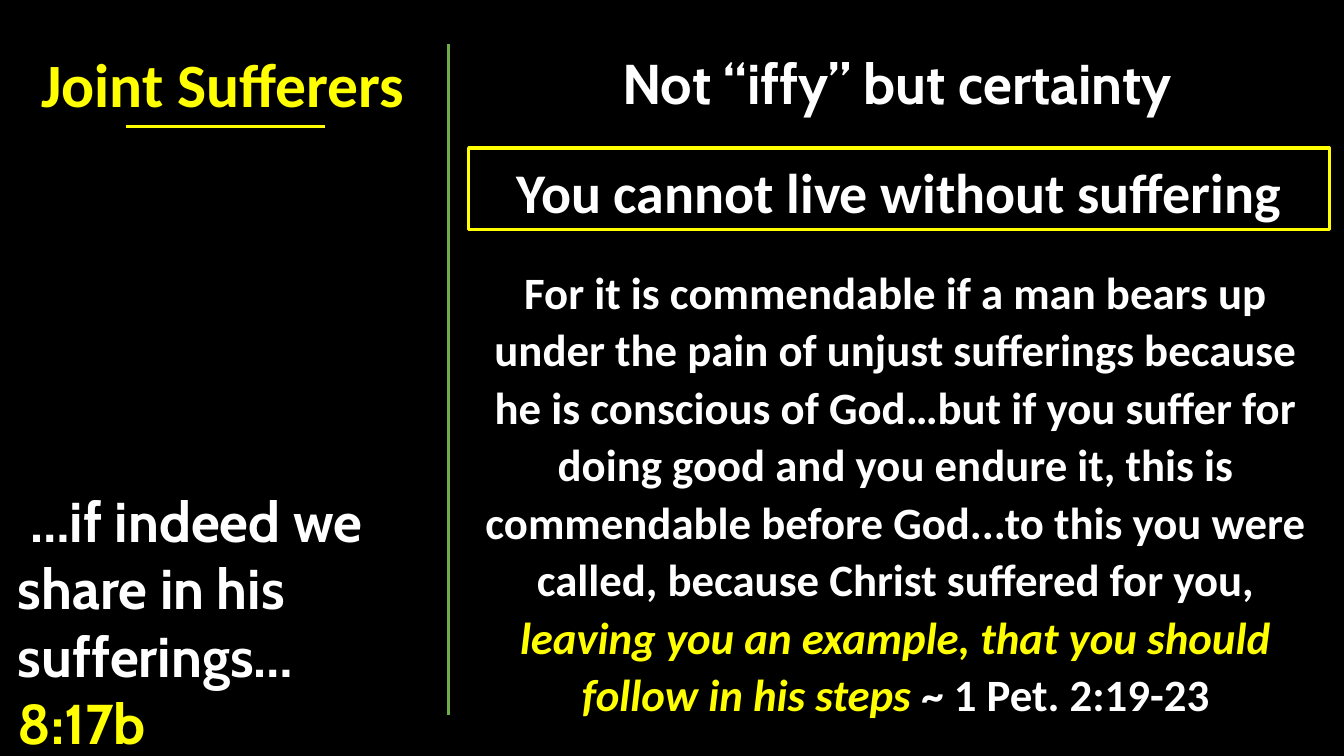
import pptx
import pptx.util
import pptx.dml.color
import pptx.enum.shapes
import pptx.enum.text
import lxml.etree
from pptx.oxml.ns import qn

Cm, Pt = pptx.util.Cm, pptx.util.Pt
ALIGN = pptx.enum.text.PP_ALIGN
BLACK, WHITE, YELLOW, GREEN = "000000", "FFFFFF", "FFFF00", "70AD47"
LINE_WIDTH = 2.25

# Content: position in cm (left, top, width, height), paragraph format, runs
TEXTS = [
    dict(at=(0.2, 1.04, 10.85, 2.13), font="Calibri", size=44,
         para=dict(alignment=ALIGN.CENTER),
         runs=[("Joint Sufferers", YELLOW, False)]),
    dict(at=(0.2, 12.14, 10.41, 7.09), font="Cabin", size=40,
         para=dict(alignment=ALIGN.LEFT),
         runs=[(" …if indeed we share in his sufferings… ", WHITE, False),
               ("8:17b", YELLOW, False)]),
    dict(at=(11.81, 1.09, 21.59, 1.96), font="Cabin", size=40,
         para=dict(alignment=ALIGN.CENTER),
         runs=[("Not “iffy” but certainty", WHITE, False)]),
    dict(at=(11.81, 3.73, 21.69, 2.06), font="Calibri", size=40, border=YELLOW,
         para=dict(alignment=ALIGN.CENTER, line_spacing=1.07),
         runs=[("You cannot live without suffering", WHITE, False)]),
    dict(at=(11.73, 6.45, 21.69, 11.94), font="Calibri", size=32,
         para=dict(alignment=ALIGN.CENTER, line_spacing=1.07),
         runs=[("For it is commendable if a man bears up under the pain of unjust "
                "sufferings because he is conscious of God…but if you suffer for "
                "doing good and you endure it, this is commendable before God...to "
                "this you were called, because Christ suffered for you, ", WHITE, False),
               ("leaving you an example, that you should follow in his steps ",
                YELLOW, True),
               ("~ 1 Pet. 2:19-23", WHITE, False)]),
]

# Lines: x1, y1, x2, y2 in cm, colour
LINES = [
    (11.3, 1.12, 11.3, 18.01, GREEN),
    (3.18, 3.18, 8.18, 3.18, YELLOW),
]


def rgb(code):
    return pptx.dml.color.RGBColor.from_string(code)


def set_attrs(obj, values):
    for name, value in values.items():
        setattr(obj, name, value)


def style_line(line, color):
    line.color.rgb = rgb(color)
    line.width = Pt(LINE_WIDTH)


def add_text(s, at, font, size, para, runs, border=None):
    box = [Cm(v) for v in at]
    if border:
        sp = s.shapes.add_shape(pptx.enum.shapes.MSO_SHAPE.RECTANGLE, *box)
        sp.shadow.inherit = False
        sp.fill.background()
        style_line(sp.line, border)
    else:
        sp = s.shapes.add_textbox(*box)
    tf = sp.text_frame
    set_attrs(tf, dict(word_wrap=True,
                       vertical_anchor=pptx.enum.text.MSO_ANCHOR.TOP,
                       auto_size=pptx.enum.text.MSO_AUTO_SIZE.SHAPE_TO_FIT_TEXT))
    p = tf.paragraphs[0]
    set_attrs(p, para)
    for text, color, italic in runs:
        r = p.add_run()
        r.text = text
        set_attrs(r.font, dict(name=font, size=Pt(size), bold=True, italic=italic))
        r.font.color.rgb = rgb(color)


def add_line(s, x1, y1, x2, y2, color):
    c = s.shapes.add_connector(pptx.enum.shapes.MSO_CONNECTOR.STRAIGHT,
                               Cm(x1), Cm(y1), Cm(x2), Cm(y2))
    style_line(c.line, color)
    lxml.etree.SubElement(c._element.spPr, qn("a:effectLst"))


def main():
    prs = pptx.Presentation()
    set_attrs(prs, dict(slide_width=Cm(33.87), slide_height=Cm(19.05)))
    s = prs.slides.add_slide(prs.slide_layouts[6])

    # Background
    s.background.fill.solid()
    s.background.fill.fore_color.rgb = rgb(BLACK)

    # Divider and title underline, then the texts
    for line in LINES:
        add_line(s, *line)
    for text in TEXTS:
        add_text(s, **text)

    prs.save("out.pptx")


if __name__ == "__main__":
    main()
